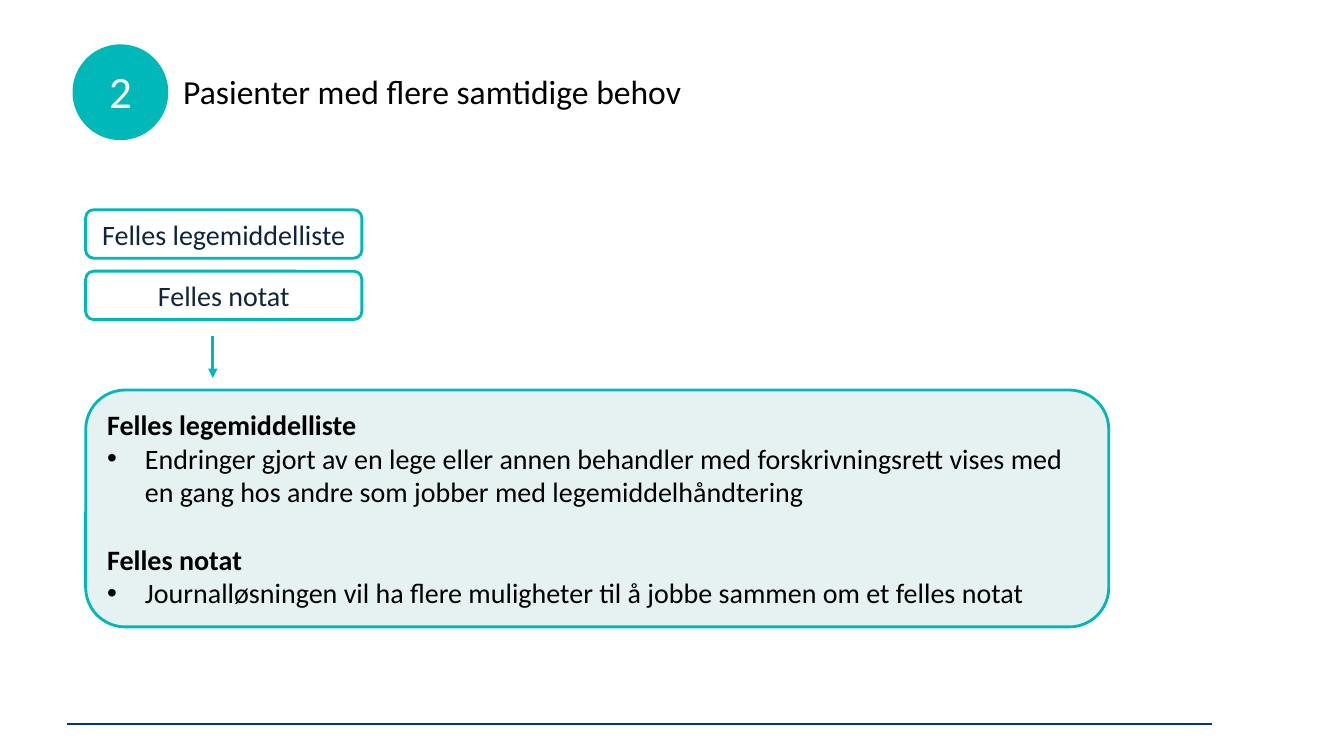
from lxml import etree
from pptx import Presentation
from pptx.dml.color import RGBColor
from pptx.enum.shapes import MSO_CONNECTOR, MSO_SHAPE
from pptx.enum.text import MSO_ANCHOR, PP_ALIGN
from pptx.oxml.ns import qn
from pptx.util import Pt

ROUNDED, OVAL = MSO_SHAPE.ROUNDED_RECTANGLE, MSO_SHAPE.OVAL
STRAIGHT = MSO_CONNECTOR.STRAIGHT
TOP, MIDDLE = MSO_ANCHOR.TOP, MSO_ANCHOR.MIDDLE
LEFT, CENTER = PP_ALIGN.LEFT, PP_ALIGN.CENTER

# Content
NUMBER = "2"
TITLE = "Pasienter med flere samtidige behov"
TOPICS = [
    ("Felles legemiddelliste",
     "Endringer gjort av en lege eller annen behandler med forskrivningsrett "
     "vises med en gang hos andre som jobber med legemiddelhåndtering"),
    ("Felles notat",
     "Journalløsningen vil ha flere muligheter til å jobbe sammen om et felles notat"),
]

# Style and layout, in points
FONT = "Calibri"
COLORS = {"teal": "00B8B7", "pale": "E6F1F1", "white": "FFFFFF",
          "navy": "0F243E", "black": "000000", "rule": "043585"}
BODY_SIZE = 20
MARGIN = 61.2
TOPIC_TOP, TOPIC_WIDTH, TOPIC_HEIGHT, TOPIC_STEP = 149.8, 197.3, 34.6, 43.9
PANEL = (MARGIN, 278.6, 730.8, 169.2)
BULLET_INDENT = 27
TOPIC_GAP = 24


def color(name):
    return RGBColor.from_string(COLORS[name])


def style(paragraph, size, color_name, bold=False, align=LEFT):
    paragraph.alignment = align
    for run in paragraph.runs:
        run.font.name = FONT
        run.font.size = Pt(size)
        run.font.bold = bold
        run.font.color.rgb = color(color_name)


def add_box(kind, box, fill, line=None):
    shape = slide.shapes.add_shape(kind, *map(Pt, box))
    shape.shadow.inherit = False
    shape.fill.solid()
    shape.fill.fore_color.rgb = color(fill)
    if line:
        shape.line.color.rgb = color(line)
        shape.line.width = Pt(2)
    else:
        shape.line.fill.background()
    shape.text_frame.word_wrap = True
    shape.text_frame.vertical_anchor = MIDDLE
    return shape


def add_line(start, end, color_name, width, arrow=False):
    connector = slide.shapes.add_connector(STRAIGHT, *map(Pt, start + end))
    connector.line.color.rgb = color(color_name)
    connector.line.width = Pt(width)
    if arrow:
        line = connector.line._get_or_add_ln()
        etree.SubElement(line, qn("a:tailEnd"), type="triangle")
    etree.SubElement(connector._element.spPr, qn("a:effectLst"))


def add_bullet(paragraph):
    properties = paragraph._p.get_or_add_pPr()
    properties.set("marL", str(Pt(BULLET_INDENT)))
    properties.set("indent", str(-Pt(BULLET_INDENT)))
    etree.SubElement(properties, qn("a:buFont"), typeface="Arial")
    etree.SubElement(properties, qn("a:buChar"), char="•")


presentation = Presentation()
presentation.slide_width, presentation.slide_height = Pt(960), Pt(540)
slide = presentation.slides.add_slide(presentation.slide_layouts[6])

# Footer rule
add_line((48.2, 517), (865.4, 517), "rule", 1.25)

# Numbered circle and title
circle = add_box(OVAL, (51.8, 31.7, 68.4, 68.4), "teal")
circle.text_frame.margin_bottom = Pt(6)
circle.text_frame.text = NUMBER
style(circle.text_frame.paragraphs[0], 32, "white", align=CENTER)

title = slide.shapes.add_textbox(*map(Pt, (123.8, 46.8, 503.3, 39.6)))
title.text_frame.word_wrap = True
title.text_frame.vertical_anchor = TOP
title.text_frame.text = TITLE
style(title.text_frame.paragraphs[0], 24, "black")

# Topic boxes
for index, (heading, _) in enumerate(TOPICS):
    top = TOPIC_TOP + index * TOPIC_STEP
    topic = add_box(ROUNDED, (MARGIN, top, TOPIC_WIDTH, TOPIC_HEIGHT), "white", "teal")
    topic.text_frame.text = heading
    style(topic.text_frame.paragraphs[0], BODY_SIZE, "navy", align=CENTER)

# Arrow from the topics to the panel
add_line((152, 239.8), (152, 270), "teal", 2.25, arrow=True)

# Explanation panel: a bold heading and a bullet for each topic
panel = add_box(ROUNDED, PANEL, "pale", "teal")
panel.text_frame.text = "\n".join(text for topic in TOPICS for text in topic)
for index, paragraph in enumerate(panel.text_frame.paragraphs):
    is_heading = index % 2 == 0
    if not is_heading:
        add_bullet(paragraph)
    elif index:
        paragraph.space_before = Pt(TOPIC_GAP)
    style(paragraph, BODY_SIZE, "black", bold=is_heading)

presentation.save("out.pptx")
